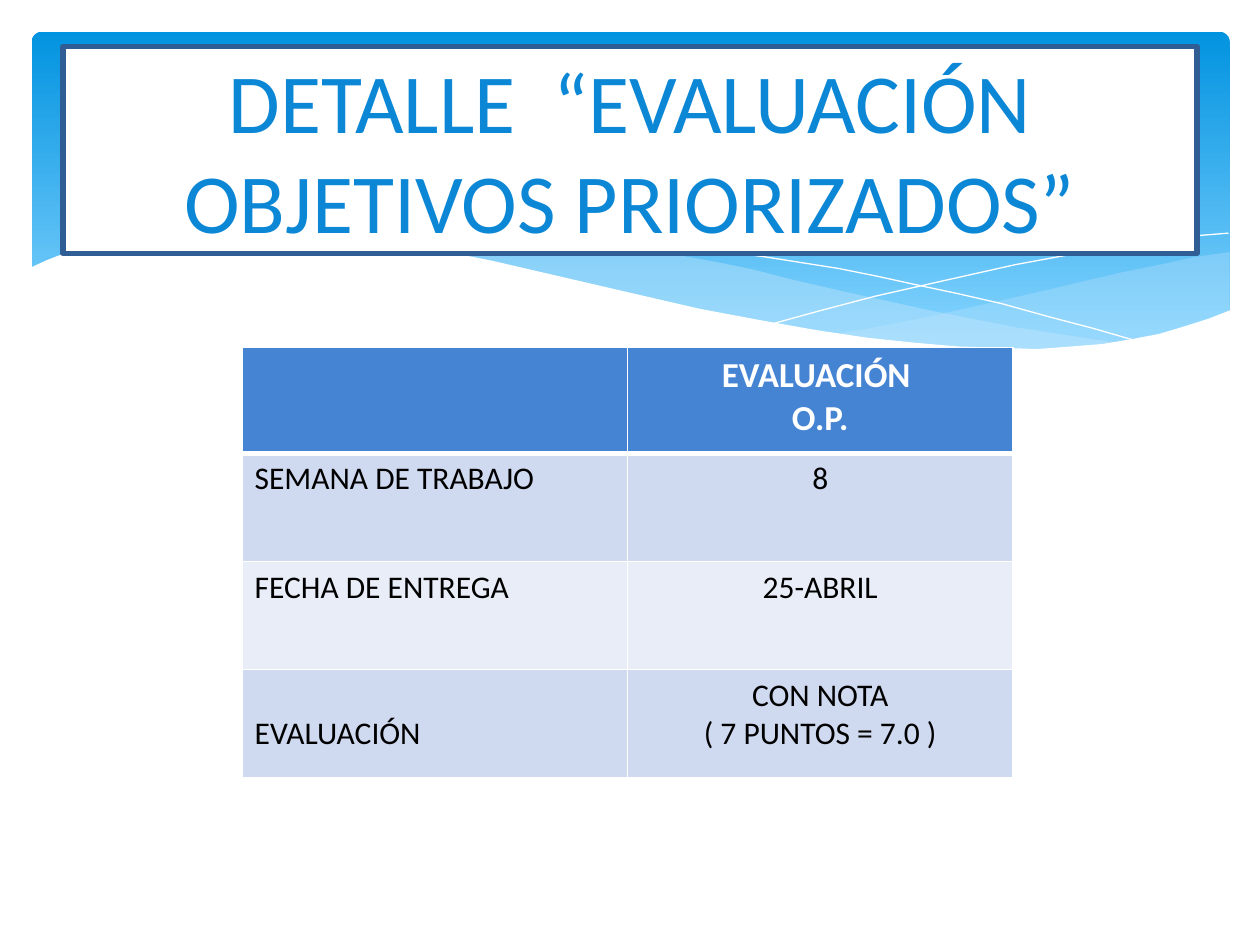
"""Build a slide with a wave banner, a framed title and an evaluation table."""
from dataclasses import dataclass
from typing import Optional

from lxml.etree import SubElement
from pptx import Presentation
from pptx.dml.color import RGBColor
from pptx.enum.shapes import MSO_SHAPE as Preset
from pptx.enum.text import MSO_ANCHOR as Anchor, PP_ALIGN as Align
from pptx.oxml.ns import qn
from pptx.util import Cm, Pt

FONT = "Calibri"
WHITE = "FFFFFF"
GRID = Cm(0.0254)


@dataclass(frozen=True)
class Wave:
    points: tuple[tuple[int, int], ...]
    fill: Optional[str] = None
    opacity: int = 100


@dataclass(frozen=True)
class CellText:
    lines: tuple[str, ...] = ()
    align: Align = Align.CENTER
    top: float = 0.13


@dataclass(frozen=True)
class TextStyle:
    size: int
    color: str
    bold: bool = False


WAVES = (
    Wave(((976, 200), (948, 204), (921, 210), (891, 216), (861, 223), (832, 230),
          (779, 242), (729, 253), (683, 262), (661, 265), (691, 269), (719, 272),
          (745, 275), (781, 277), (814, 278), (844, 277), (872, 274), (897, 270),
          (921, 265), (942, 259), (963, 252), (976, 247)), "C6E7FC", 29),
    Wave(((893, 273), (866, 269), (807, 260), (741, 247), (668, 231), (629, 222),
          (598, 214), (569, 208), (541, 203), (514, 198), (489, 194), (442, 189),
          (399, 186), (361, 185), (328, 187), (299, 189), (286, 191), (323, 196),
          (362, 203), (404, 211), (449, 222), (491, 232), (530, 240), (566, 248),
          (601, 255), (634, 261), (665, 266), (695, 270), (722, 274), (748, 276),
          (785, 278), (818, 278), (848, 277), (876, 275)), "C6E7FC", 40),
    Wave(((309, 195), (328, 192), (353, 189), (387, 187), (433, 187), (469, 189),
          (510, 192), (556, 197), (608, 204), (665, 213), (695, 219), (727, 226),
          (760, 233), (795, 241), (831, 251), (869, 261), (907, 272))),
    Wave(((613, 257), (653, 246), (695, 235), (748, 223), (806, 210), (866, 199),
          (895, 194), (924, 190), (951, 187), (975, 185))),
    Wave(((977, 246), (959, 253), (940, 259), (920, 265), (899, 269), (875, 273),
          (850, 275), (823, 277), (793, 276), (761, 275), (726, 272), (688, 268),
          (648, 262), (603, 254), (555, 245), (503, 233), (447, 220), (391, 207),
          (340, 197), (292, 190), (250, 186), (211, 184), (177, 184), (146, 185),
          (119, 187), (95, 191), (76, 195), (59, 199), (46, 203), (36, 207),
          (23, 213), (23, 329), (977, 329)), WHITE),
)

ROWS = (
    (CellText(), CellText(("EVALUACIÓN ", "O.P."))),
    (CellText(("SEMANA DE TRABAJO",), Align.LEFT), CellText(("8",))),
    (CellText(("FECHA DE ENTREGA",), Align.LEFT), CellText(("25-ABRIL",))),
    (CellText(("EVALUACIÓN",), Align.LEFT, 0.9),
     CellText(("CON NOTA", "( 7 PUNTOS = 7.0 )"))),
)
ROW_FILLS = ("4584D3", "CFD9EF", "E9EDF7", "CFD9EF")
HEADER = TextStyle(20, WHITE, True)
BODY = TextStyle(18, "000000")
TITLE = TextStyle(48, "0B87D6")


def paint(target, color: str) -> None:
    target.solid()
    target.fore_color.rgb = RGBColor.from_string(color)


def write(frame, lines: tuple[str, ...], align: Align, style: TextStyle) -> None:
    for index, line in enumerate(lines):
        para = frame.add_paragraph() if index else frame.paragraphs[0]
        para.alignment = align
        span = para.add_run()
        span.text = line
        span.font.name, span.font.size, span.font.bold = FONT, Pt(style.size), style.bold
        paint(span.font.fill, style.color)


def draw_banner(page) -> None:
    banner = page.shapes.add_shape(
        Preset.ROUNDED_RECTANGLE, Cm(0.64), Cm(0.64), Cm(24.15), Cm(6.86))
    banner.shadow.inherit = False
    banner.adjustments[0] = 0.03
    banner.line.fill.background()
    banner.fill.gradient()
    banner.fill.gradient_angle = 270
    stops = ((0, "0293E0"), (0.9, "83D3FE"))
    for stop, (position, color) in zip(banner.fill.gradient_stops, stops):
        stop.position = position
        stop.color.rgb = RGBColor.from_string(color)


def draw_wave(page, wave: Wave) -> None:
    builder = page.shapes.build_freeform(*wave.points[0], scale=GRID)
    builder.add_line_segments(wave.points[1:], close=wave.fill is not None)
    shape = builder.convert_to_shape()
    shape.shadow.inherit = False
    if wave.fill is None:
        shape.fill.background()
        paint(shape.line.fill, WHITE)
        shape.line.width = Cm(0)
        return
    shape.line.fill.background()
    paint(shape.fill, wave.fill)
    if wave.opacity < 100:
        color = next(shape.element.spPr.iter(qn("a:srgbClr")))
        SubElement(color, qn("a:alpha"), val=str(wave.opacity * 1000))


def draw_title(page) -> None:
    box = page.shapes.add_shape(Preset.RECTANGLE, Cm(1.27), Cm(0.94), Cm(22.86), Cm(4.17))
    box.shadow.inherit = False
    paint(box.fill, WHITE)
    paint(box.line.fill, "315D95")
    box.line.width = Pt(3)
    box.text_frame.word_wrap = True
    box.text_frame.vertical_anchor = Anchor.MIDDLE
    write(box.text_frame, ("DETALLE  “EVALUACIÓN OBJETIVOS PRIORIZADOS”",), Align.CENTER, TITLE)


def add_borders(cell, top: int, bottom: int) -> None:
    properties = cell._tc.get_or_add_tcPr()
    for side, width in (("L", 1), ("R", 1), ("T", top), ("B", bottom)):
        line = SubElement(properties, qn(f"a:ln{side}"), w=str(Pt(width)))
        SubElement(SubElement(line, qn("a:solidFill")), qn("a:srgbClr"), val=WHITE)


def draw_table(page) -> None:
    table = page.shapes.add_table(
        len(ROWS), 2, Cm(4.88), Cm(7.01), Cm(15.54), Cm(8.67)).table
    table.horz_banding = False
    for column in table.columns:
        column.width = Cm(7.77)
    for index, (texts, fill) in enumerate(zip(ROWS, ROW_FILLS)):
        table.rows[index].height = Cm(2.18 if index else 2.13)
        for column, text in enumerate(texts):
            cell = table.cell(index, column)
            add_borders(cell, 3 if index == 1 else 1, 1 if index else 3)
            paint(cell.fill, fill)
            cell.margin_top = Cm(text.top)
            write(cell.text_frame, text.lines, text.align, BODY if index else HEADER)


def main() -> None:
    deck = Presentation()
    deck.slide_width, deck.slide_height = Cm(25.4), Cm(19.05)
    page = deck.slides.add_slide(deck.slide_layouts[6])
    draw_banner(page)
    for wave in WAVES:
        draw_wave(page, wave)
    draw_title(page)
    draw_table(page)
    deck.save("out.pptx")


if __name__ == "__main__":
    main()
